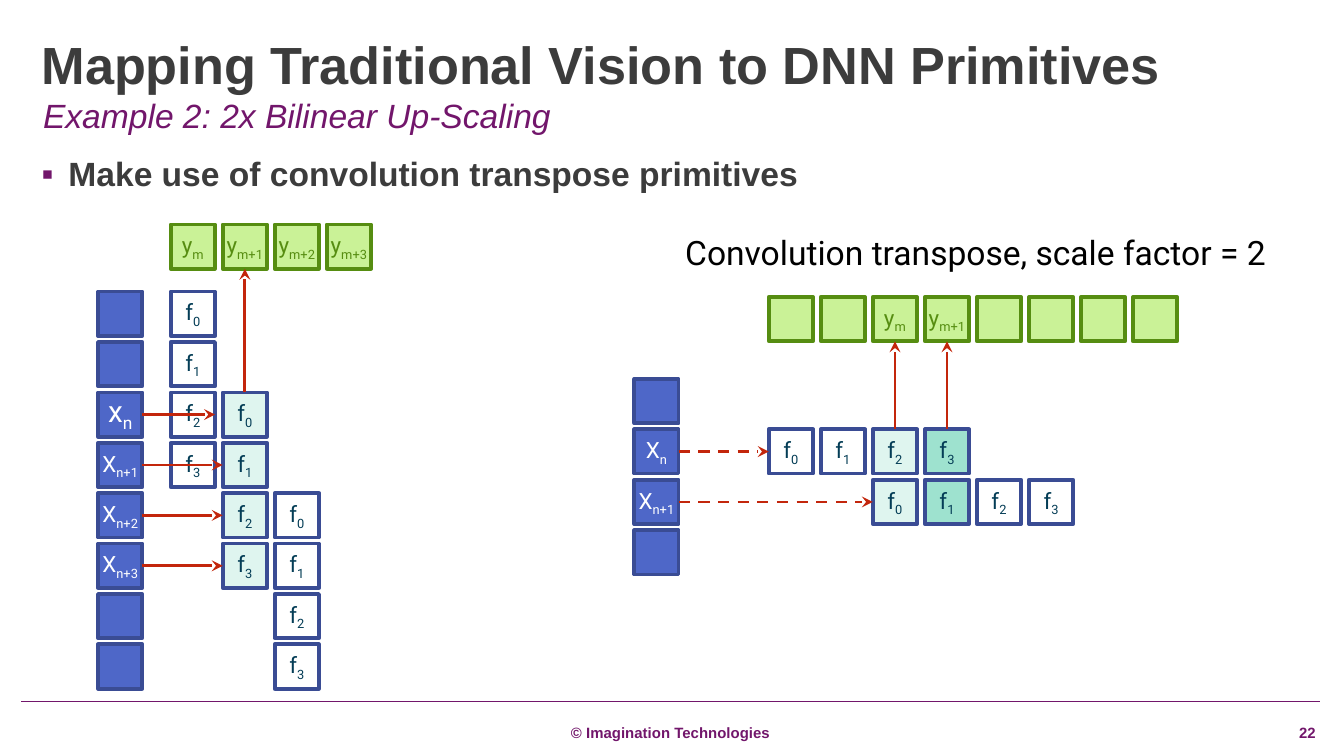
from dataclasses import dataclass

from lxml.etree import SubElement
from pptx import Presentation
from pptx.dml.color import RGBColor
from pptx.enum.dml import MSO_LINE
from pptx.enum.shapes import MSO_CONNECTOR, MSO_SHAPE
from pptx.enum.text import MSO_ANCHOR, PP_ALIGN
from pptx.oxml.ns import qn
from pptx.util import Inches, Pt


@dataclass(frozen=True)
class Theme:
    heading_font: str = "Arial"
    diagram_font: str = "Roboto"
    ink: str = "3C3C3C"
    purple: str = "72166B"
    black: str = "000000"
    arrow: str = "C3260C"
    title_size: float = 28
    body_size: float = 18
    first_input_size: float = 16
    cell_size: float = 12
    footer_size: float = 8


THEME = Theme()
# Cell kinds: fill, outline, text colour
CELL_STYLES = {
    "input": ("4E67C8", "3A4C94", "FFFFFF"),
    "output": ("CAF297", "568D11", "568D11"),
    "filter": (None, "3A4C94", "043D56"),
    "used": ("DFF5EF", "3A4C94", "043D56"),
    "used_next": ("9EE2CF", "3A4C94", "043D56"),
}
CELL = 0.33
COLUMN_STEP = 2.71 / 7
ROW_STEP = 3 / 8
TOP, LEFT, BOTTOM, RIGHT = range(4)

presentation = Presentation()
presentation.slide_width = Inches(10)
presentation.slide_height = Inches(10 * 9 / 16)
slide = presentation.slides.add_slide(presentation.slide_layouts[6])
shapes = slide.shapes


def add_run(paragraph, text, font, size, color, **styles):
    run = paragraph.add_run()
    run.text = text
    formats = {"name": font, "size": Pt(size), **styles}
    for attribute, value in formats.items():
        setattr(run.font, attribute, value)
    run.font.color.rgb = RGBColor.from_string(color)
    return run


def add_cell(left, top, kind, label="", size=THEME.cell_size, anchor=MSO_ANCHOR.MIDDLE):
    fill, outline, ink = CELL_STYLES[kind]
    cell = shapes.add_shape(MSO_SHAPE.RECTANGLE, Inches(left), Inches(top),
                            Inches(CELL), Inches(CELL))
    cell.shadow.inherit = False
    if fill:
        cell.fill.solid()
        cell.fill.fore_color.rgb = RGBColor.from_string(fill)
    else:
        cell.fill.background()
    cell.line.color.rgb = RGBColor.from_string(outline)
    cell.line.width = Pt(2)
    frame = cell.text_frame
    formats = {"margin_left": 0, "margin_right": 0, "margin_top": 0,
               "margin_bottom": 0, "vertical_anchor": anchor}
    for attribute, value in formats.items():
        setattr(frame, attribute, value)
    if label:
        paragraph = frame.paragraphs[0]
        paragraph.alignment = PP_ALIGN.CENTER
        symbol, index = label.split("_")
        add_run(paragraph, symbol, THEME.diagram_font, size, ink)
        subscript = add_run(paragraph, index, THEME.diagram_font, size, ink)
        subscript.font._element.set("baseline", "-25000")
    return cell


# Footer rule
footer_rule = shapes.add_connector(MSO_CONNECTOR.STRAIGHT, Inches(0.16), Inches(5.22),
                                   Inches(9.82), Inches(5.22))
footer_rule.line.color.rgb = RGBColor.from_string(THEME.purple)
footer_rule.line.width = Pt(0.5)
SubElement(footer_rule._element.spPr, qn("a:effectLst"))

# Headings, bullet, diagram caption and footer
heading, diagram = THEME.heading_font, THEME.diagram_font
texts = [
    ("title", (0.31, 0.31, 9.51, 0.35), 0, "Mapping Traditional Vision to DNN Primitives",
     heading, THEME.title_size, THEME.ink, {"bold": True}, {"line_spacing": 0.85}),
    ("subtitle", (0.32, 0.71, 9.51, 0.24), 0, "Example 2: 2x Bilinear Up-Scaling",
     heading, THEME.body_size, THEME.purple, {"italic": True}, {"space_after": Pt(6)}),
    ("bullet", (0.31, 1.14, 9.26, 3.99), 0, "Make use of convolution transpose primitives",
     heading, THEME.body_size, THEME.ink, {"bold": True}, {"space_after": Pt(6)}),
    ("caption", (5, 1.68, 4.57, 0.4), 1, "Convolution transpose, scale factor = 2",
     diagram, THEME.body_size, THEME.black, {}, {}),
    ("footer", (0.18, 5.4, 9.64, 0.12), 0, "\t© Imagination Technologies\t\t22",
     heading, THEME.footer_size, THEME.purple, {"bold": True}, {"line_spacing": 0.9}),
]
for part, place, inset, text, font, size, color, styles, spacing in texts:
    frame = shapes.add_textbox(*map(Inches, place)).text_frame
    formats = {"word_wrap": part != "caption",
               "margin_left": Inches(0.1 * inset), "margin_right": Inches(0.1 * inset),
               "margin_top": Inches(0.05 * inset), "margin_bottom": Inches(0.05 * inset)}
    for attribute, value in formats.items():
        setattr(frame, attribute, value)
    paragraph = frame.paragraphs[0]
    properties = paragraph._p.get_or_add_pPr()
    if part == "bullet":
        properties.set("marL", str(Inches(0.2)))
        properties.set("indent", str(Inches(-0.2)))
        bullet_color = SubElement(properties, qn("a:buClr"))
        SubElement(bullet_color, qn("a:srgbClr"), val=THEME.purple)
        SubElement(properties, qn("a:buFont"), typeface=heading)
        SubElement(properties, qn("a:buChar"), char="▪")
    if part == "footer":
        tabs = SubElement(properties, qn("a:tabLst"))
        for position, alignment in [(4.81, "ctr"), (9.42, "r"), (9.61, "r")]:
            SubElement(tabs, qn("a:tab"), pos=str(Inches(position)), algn=alignment)
    for attribute, value in spacing.items():
        setattr(paragraph, attribute, value)
    add_run(paragraph, text, font, size, color, **styles)

# Left diagram: inputs, three filter positions two rows apart, outputs
FILTER = ["f_0", "f_1", "f_2", "f_3"]
input_top, filter_left, output_top, stride = 2.17, 1.27, 1.67, 2
inputs = []
for row, label in enumerate(["", "", "x_n", "X_n+1", "X_n+2", "X_n+3", "", ""]):
    first = label == "x_n"
    inputs.append(add_cell(0.73, input_top + row * ROW_STEP, "input", label,
                           THEME.first_input_size if first else THEME.cell_size,
                           MSO_ANCHOR.TOP if first else MSO_ANCHOR.MIDDLE))
filters = [
    [add_cell(filter_left + column * COLUMN_STEP,
              input_top + (stride * column + tap) * ROW_STEP, kind, label)
     for tap, label in enumerate(FILTER)]
    for column, kind in enumerate(["filter", "used", "filter"])
]
outputs = [add_cell(filter_left + column * COLUMN_STEP, output_top, "output", label)
           for column, label in enumerate(["y_m", "y_m+1", "y_m+2", "y_m+3"])]

# Right diagram: outputs, inputs, two filter rows offset by the scale factor
up_left, up_output_top, up_input_top, scale = 5.72, 2.21, 2.82, 2
up_inputs = [add_cell(4.72, up_input_top + row * ROW_STEP, "input", label)
             for row, label in enumerate(["", "X_n", "X_n+1", ""])]
up_outputs = [add_cell(up_left + column * COLUMN_STEP, up_output_top, "output", label)
              for column, label in enumerate(["", "", "y_m", "y_m+1", "", "", "", ""])]
up_kinds = {2: "used", 3: "used_next"}
up_filters = [
    [add_cell(up_left + (scale * row + tap) * COLUMN_STEP,
              up_input_top + (row + 1) * ROW_STEP,
              up_kinds.get(scale * row + tap, "filter"), label)
     for tap, label in enumerate(FILTER)]
    for row in range(2)
]

# Arrows: start cell and side, end cell and side, dashed
arrows = [(inputs[2], RIGHT, filters[0][2], RIGHT, False)]
arrows += [(inputs[2 + tap], RIGHT, filters[1][tap], LEFT, False) for tap in (1, 2, 3)]
arrows.append((filters[1][0], TOP, outputs[1], BOTTOM, False))
arrows += [(up_inputs[row + 1], RIGHT, up_filters[row][0], LEFT, True) for row in range(2)]
arrows += [(up_filters[0][tap], TOP, up_outputs[tap], BOTTOM, False) for tap in (2, 3)]
for start, start_side, end, end_side, dashed in arrows:
    arrow = shapes.add_connector(MSO_CONNECTOR.STRAIGHT, 0, 0, 0, 0)
    arrow.begin_connect(start, start_side)
    arrow.end_connect(end, end_side)
    arrow.line.color.rgb = RGBColor.from_string(THEME.arrow)
    arrow.line.width = Pt(1.5)
    if dashed:
        arrow.line.dash_style = MSO_LINE.DASH
    SubElement(arrow.line._get_or_add_ln(), qn("a:tailEnd"), type="stealth")
    SubElement(arrow._element.spPr, qn("a:effectLst"))

presentation.save("out.pptx")
